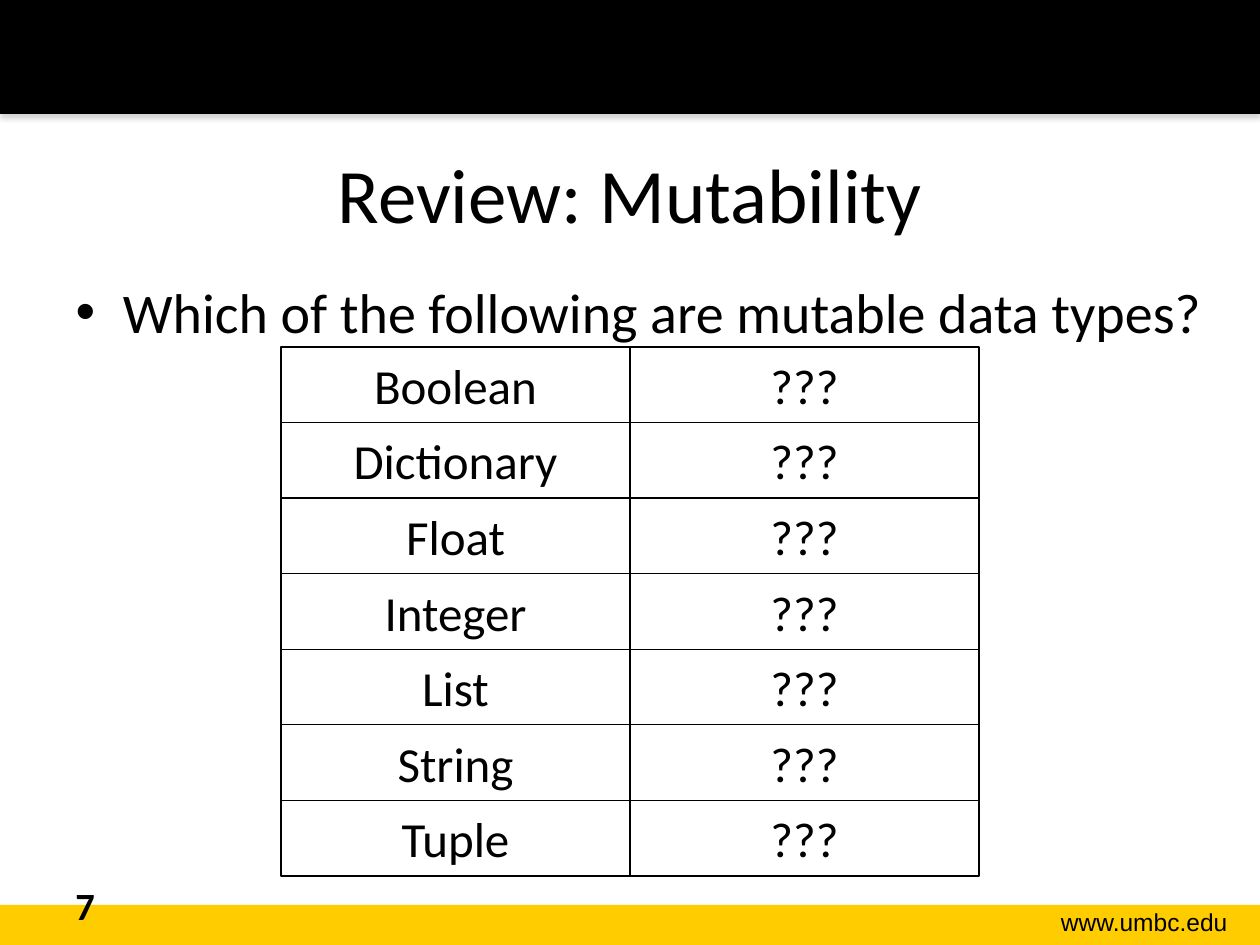
"""Build the mutability review slide."""
from lxml import etree
from pptx import Presentation
from pptx import util as u
from pptx.dml.color import RGBColor
from pptx.enum import shapes, text
from pptx.oxml import ns

EMU_PER_PX = 914400 / 126
BLACK, WHITE, GOLD = "000000", "FFFFFF", "FFCC00"
DATA_TYPES = ["Boolean", "Dictionary", "Float", "Integer", "List", "String", "Tuple"]


def px(length):
    """Turn pixels into EMU."""
    return u.Emu(round(length * EMU_PER_PX))


def colour(code):
    """Turn a hex string into a colour."""
    return RGBColor.from_string(code)


def set_text(frame, wording, size, align=text.PP_ALIGN.LEFT, font="Calibri", bold=False):
    """Write one formatted paragraph into a text frame."""
    frame.text = wording
    frame.word_wrap = True
    paragraph = frame.paragraphs[0]
    paragraph.alignment = align
    paragraph.font.name = font
    paragraph.font.size = u.Pt(size)
    paragraph.font.bold = bold
    paragraph.font.color.rgb = colour(BLACK)


def add_rectangle(slide, box, fill):
    """Add a plain filled rectangle without an outline."""
    rectangle = slide.shapes.add_shape(shapes.MSO_SHAPE.RECTANGLE, *map(px, box))
    rectangle.shadow.inherit = False
    rectangle.fill.solid()
    rectangle.fill.fore_color.rgb = colour(fill)
    rectangle.line.fill.background()
    return rectangle


def add_shadow(shape):
    """Give a shape a soft shadow below it."""
    effects = shape._element.spPr.find(ns.qn("a:effectLst"))
    shadow = etree.SubElement(effects, ns.qn("a:outerShdw"), blurRad="40000",
                              dist="23000", dir="5400000", rotWithShape="0")
    shade = etree.SubElement(shadow, ns.qn("a:srgbClr"), val="808080")
    etree.SubElement(shade, ns.qn("a:alpha"), val="35000")


def add_label(slide, box, wording, size, **style):
    """Add a text box."""
    label = slide.shapes.add_textbox(*map(px, box))
    set_text(label.text_frame, wording, size, **style)


def fill_placeholder(placeholder, box, wording, size, **style):
    """Place and fill a template placeholder."""
    placeholder.left, placeholder.top, placeholder.width, placeholder.height = map(px, box)
    set_text(placeholder.text_frame, wording, size, **style)
    placeholder.text_frame.auto_size = text.MSO_AUTO_SIZE.NONE


def add_tile(slide, box, wording):
    """Add an outlined tile with centred text."""
    tile = add_rectangle(slide, box, WHITE)
    tile.line.color.rgb = colour(BLACK)
    tile.line.width = u.Pt(0.75)
    tile.text_frame.vertical_anchor = text.MSO_ANCHOR.MIDDLE
    set_text(tile.text_frame, wording, 28, align=text.PP_ALIGN.CENTER)


def add_type_grid(slide, left, top, width, height):
    """Add a grid of tiles pairing each data type with an open answer."""
    tile_width, tile_height = width / 2, height / len(DATA_TYPES)
    for row, data_type in enumerate(DATA_TYPES):
        for column, wording in enumerate((data_type, "???")):
            box = (left + column * tile_width, top + row * tile_height,
                   tile_width, tile_height)
            add_tile(slide, box, wording)


def main():
    """Build and save the slide."""
    presentation = Presentation()
    presentation.slide_width, presentation.slide_height = px(1260), px(945)
    slide = presentation.slides.add_slide(presentation.slide_layouts[1])
    add_rectangle(slide, (0, 905, 1260, 40), GOLD)
    add_shadow(add_rectangle(slide, (0, 0, 1260, 114), BLACK))
    add_label(slide, (989, 901, 251, 43), "www.umbc.edu", 14,
              align=text.PP_ALIGN.RIGHT, font="Arial")
    title, body = slide.placeholders
    fill_placeholder(title, (63, 114, 1134, 158), "Review: Mutability", 44,
                     align=text.PP_ALIGN.CENTER)
    fill_placeholder(body, (63, 271, 1172, 573),
                     "Which of the following are mutable data types?", 32)
    add_label(slide, (63, 876, 294, 50), "7", 22, bold=True)
    add_type_grid(slide, 281, 347, 698, 529)
    presentation.save("out.pptx")


if __name__ == "__main__":
    main()
